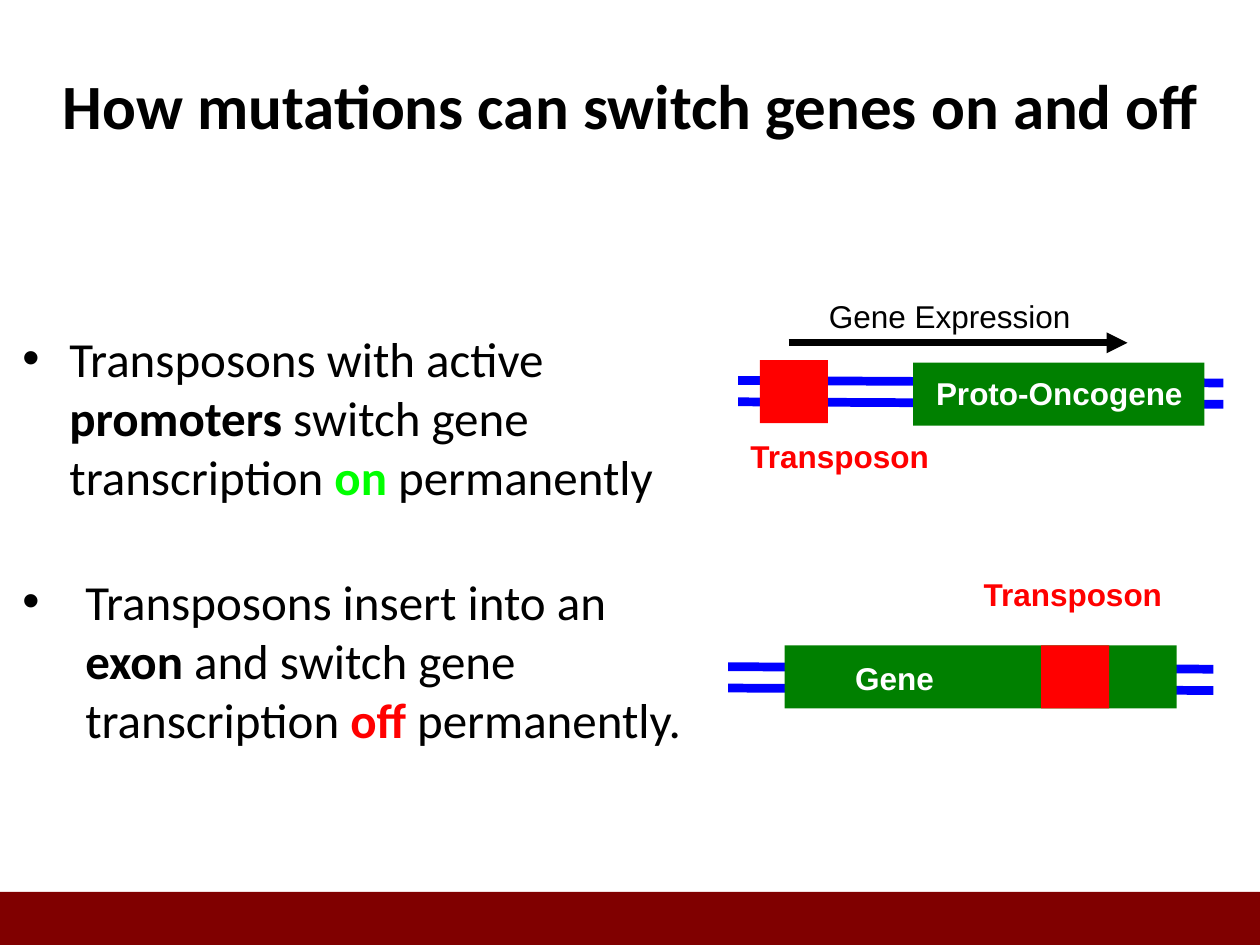
from lxml.etree import SubElement
from pptx import Presentation
from pptx.dml.color import RGBColor
from pptx.enum.shapes import MSO_CONNECTOR, MSO_SHAPE
from pptx.enum.text import MSO_ANCHOR, PP_ALIGN
from pptx.oxml.ns import qn
from pptx.util import Cm, Pt

BLACK = RGBColor(0x00, 0x00, 0x00)
WHITE = RGBColor(0xFF, 0xFF, 0xFF)
MAROON = RGBColor(0x80, 0x00, 0x00)
GENE_GREEN = RGBColor(0x00, 0x80, 0x00)
ON_GREEN = RGBColor(0x00, 0xFF, 0x00)
RED = RGBColor(0xFF, 0x00, 0x00)
DNA_BLUE = RGBColor(0x00, 0x00, 0xFF)


def style(run, font, size, color, bold):
    """Set the font of one run."""
    run.font.name = font
    run.font.size = Pt(size)
    run.font.color.rgb = color
    run.font.bold = bold


def add_title(slide, text):
    """Add the centred slide title."""
    title = slide.shapes.add_textbox(Cm(0.69), Cm(0.51), Cm(24.05), Cm(3.18))
    frame = title.text_frame
    frame.word_wrap = True
    frame.vertical_anchor = MSO_ANCHOR.MIDDLE
    frame.text = text
    frame.paragraphs[0].alignment = PP_ALIGN.CENTER
    style(frame.paragraphs[0].runs[0], "Calibri", 36, BLACK, True)


def add_bullet(slide, top, width, height, indent, parts):
    """Add a bulleted statement made of (text, colour, bold) parts."""
    statement = slide.shapes.add_textbox(Cm(0.2), Cm(top), Cm(width), Cm(height))
    statement.text_frame.word_wrap = True
    paragraph = statement.text_frame.paragraphs[0]
    for text, color, bold in parts:
        run = paragraph.add_run()
        run.text = text
        style(run, "Calibri", 28, color, bold)
    properties = paragraph._p.get_or_add_pPr()
    properties.set("marL", str(Cm(indent)))
    properties.set("indent", str(-Cm(indent)))
    SubElement(properties, qn("a:buFont"), typeface="Arial")
    SubElement(properties, qn("a:buChar"), char="•")


def add_block(slide, left, top, width, height, color):
    """Add a plain filled rectangle."""
    block = slide.shapes.add_shape(
        MSO_SHAPE.RECTANGLE, Cm(left), Cm(top), Cm(width), Cm(height))
    block.shadow.inherit = False
    block.fill.solid()
    block.fill.fore_color.rgb = color
    block.line.fill.background()


def add_line(slide, start, end, color, weight):
    """Add a straight line and return it."""
    line = slide.shapes.add_connector(
        MSO_CONNECTOR.STRAIGHT, *(Cm(value) for value in (*start, *end)))
    line.line.color.rgb = color
    line.line.width = Pt(weight)
    SubElement(line._element.spPr, qn("a:effectLst"))
    return line


def add_arrow(slide, start, end):
    """Add a black arrow pointing at its end."""
    arrow = add_line(slide, start, end, BLACK, 4)
    SubElement(arrow.line._get_or_add_ln(), qn("a:tailEnd"), type="triangle")


def add_dna(slide, left, top):
    """Add the two slightly sloping strands of DNA."""
    for strand_top in (top, top + 0.43):
        add_line(slide, (left, strand_top), (left + 9.78, strand_top + 0.05),
                 DNA_BLUE, 5)


def add_label(slide, left, top, width, text, color, bold=True):
    """Add a one-line diagram label."""
    label = slide.shapes.add_textbox(Cm(left), Cm(top), Cm(width), Cm(1.02))
    label.text_frame.word_wrap = False
    label.text_frame.text = text
    style(label.text_frame.paragraphs[0].runs[0], "Arial", 18, color, bold)


def add_switched_on(slide):
    """Draw a transposon upstream of a proto-oncogene."""
    add_dna(slide, 14.88, 7.67)
    add_block(slide, 18.41, 7.31, 5.87, 1.27, GENE_GREEN)
    add_block(slide, 15.32, 7.26, 1.37, 1.27, RED)
    add_label(slide, 18.62, 7.42, 5.54, "Proto-Oncogene", WHITE)
    add_label(slide, 14.88, 8.69, 4.14, "Transposon", RED)
    add_arrow(slide, (15.9, 6.91), (22.73, 6.91))
    add_label(slide, 16.46, 5.87, 5.44, "Gene Expression", BLACK, False)


def add_switched_off(slide):
    """Draw a transposon inserted into a gene."""
    add_dna(slide, 14.68, 13.44)
    add_block(slide, 15.82, 13.01, 7.9, 1.27, GENE_GREEN)
    add_block(slide, 20.99, 13.01, 1.37, 1.27, RED)
    add_label(slide, 16.99, 13.16, 2.11, "Gene", WHITE)
    add_label(slide, 19.58, 11.46, 4.14, "Transposon", RED)


def main():
    """Build and save the slide."""
    presentation = Presentation()
    presentation.slide_width = Cm(25.4)
    presentation.slide_height = Cm(19.05)
    slide = presentation.slides.add_slide(presentation.slide_layouts[6])
    add_block(slide, 0, 17.98, 25.4, 1.07, MAROON)
    add_title(slide, "How mutations can switch genes on and off")
    add_bullet(slide, 6.5, 14.45, 4.34, 0.95, [
        ("Transposons with active ", BLACK, False),
        ("promoters", BLACK, True),
        (" switch gene transcription ", BLACK, False),
        ("on", ON_GREEN, True),
        (" permanently", BLACK, False)])
    add_switched_off(slide)
    add_switched_on(slide)
    add_bullet(slide, 11.4, 13.94, 4.62, 1.27, [
        ("Transposons insert into an ", BLACK, False),
        ("exon", BLACK, True),
        (" and switch gene transcription ", BLACK, False),
        ("off", RED, True),
        (" permanently.", BLACK, False)])
    presentation.save("out.pptx")


if __name__ == "__main__":
    main()
